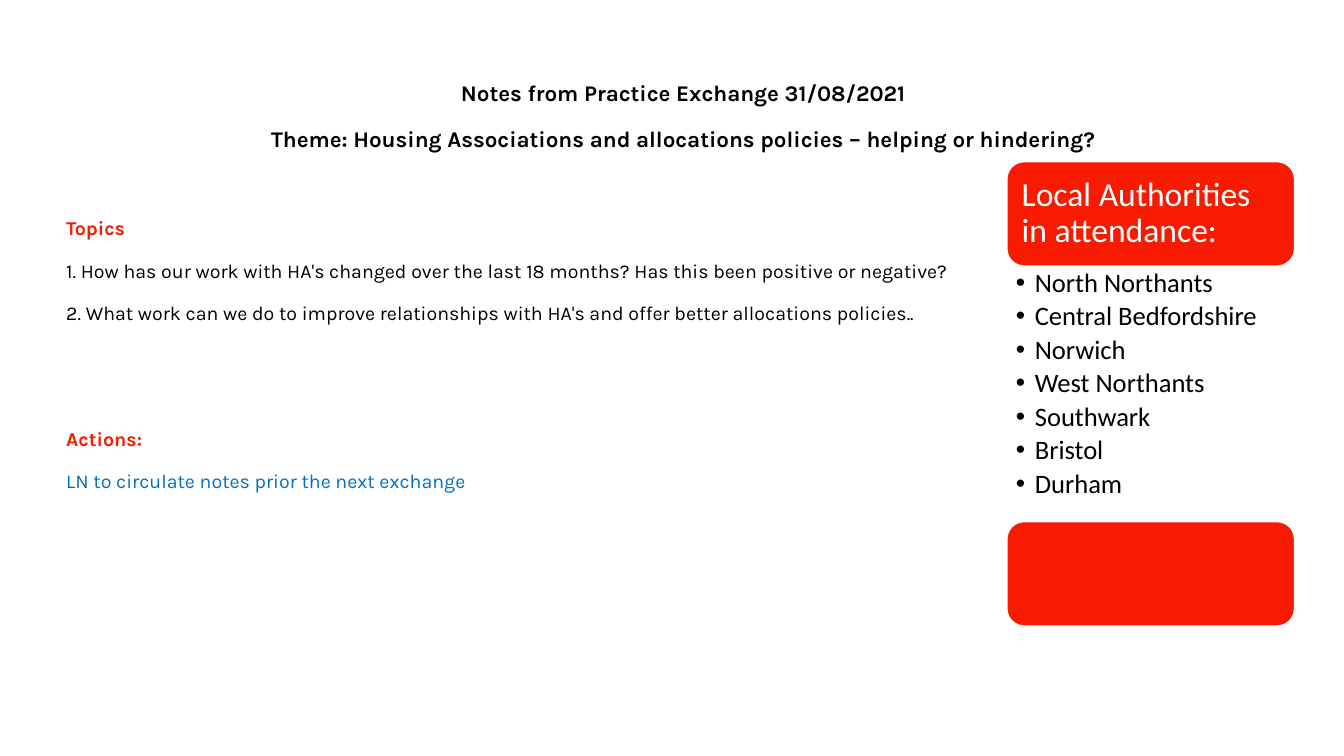
import pptx
import pptx.util
import pptx.dml.color
import pptx.enum.shapes
import pptx.enum.text
import pptx.oxml
import pptx.oxml.ns

Cm, Pt = pptx.util.Cm, pptx.util.Pt
RGBColor = pptx.dml.color.RGBColor
PP_ALIGN = pptx.enum.text.PP_ALIGN
MSO_ANCHOR = pptx.enum.text.MSO_ANCHOR

RED = RGBColor(0xF8, 0x1B, 0x02)
BLUE = RGBColor(0x00, 0x70, 0xC0)
BLACK = RGBColor(0, 0, 0)
WHITE = RGBColor(0xFF, 0xFF, 0xFF)

PANEL_LEFT, PANEL_TOP, PANEL_WIDTH = 25.37, 4.07, 7.26
BAND_HEIGHT, LIST_HEIGHT = 2.64, 6.43

# Text, size, colour, bold, alignment, space before
NOTES = [
    ("Notes from Practice Exchange 31/08/2021", 16, BLACK, True, PP_ALIGN.CENTER, 10),
    ("Theme: Housing Associations and allocations policies – helping or hindering?",
     16, BLACK, True, PP_ALIGN.CENTER, 10),
    ("Topics", 14, RED, True, PP_ALIGN.LEFT, 42.5),
    ("1. How has our work with HA's changed over the last 18 months? "
     "Has this been positive or negative?", 14, BLACK, False, PP_ALIGN.LEFT, 10),
    ("2. What work can we do to improve relationships with HA's "
     "and offer better allocations policies..", 14, BLACK, False, PP_ALIGN.LEFT, 10),
    ("Actions:", 14, RED, True, PP_ALIGN.JUSTIFY, 70),
    ("LN to circulate notes prior the next exchange",
     14, BLUE, False, PP_ALIGN.JUSTIFY, 10),
]
AUTHORITIES = ["North Northants", "Central Bedfordshire", "Norwich", "West Northants",
               "Southwark", "Bristol", "Durham"]


def format_paragraph(p, font, size, color, bold=False, spacing=0.9):
    p.line_spacing = spacing
    for r in p.runs:
        r.font.name = font
        r.font.size = Pt(size)
        r.font.bold = bold
        r.font.color.rgb = color


def set_margins(tf, left, top, right, bottom):
    tf.margin_left, tf.margin_top = Cm(left), Cm(top)
    tf.margin_right, tf.margin_bottom = Cm(right), Cm(bottom)


def add_text(s, left, top, width, height, lines):
    tf = s.shapes.add_textbox(Cm(left), Cm(top), Cm(width), Cm(height)).text_frame
    tf.word_wrap = True
    tf.text = "\n".join(lines)
    return tf


def add_band(s, top):
    sp = s.shapes.add_shape(pptx.enum.shapes.MSO_SHAPE.ROUNDED_RECTANGLE,
                            Cm(PANEL_LEFT), Cm(top), Cm(PANEL_WIDTH), Cm(BAND_HEIGHT))
    sp.shadow.inherit = False
    sp.fill.solid()
    sp.fill.fore_color.rgb = RED
    sp.line.color.rgb = WHITE
    sp.line.width = Pt(1.25)
    return sp


def add_bullet(p, indent):
    pPr = p._p.get_or_add_pPr()
    pPr.set("marL", str(Cm(indent)))
    pPr.set("indent", str(-Cm(indent)))
    ns = pptx.oxml.ns.nsdecls("a")
    pPr.append(pptx.oxml.parse_xml(f'<a:buFont {ns} typeface="Arial"/>'))
    pPr.append(pptx.oxml.parse_xml(f'<a:buChar {ns} char="•"/>'))


def add_notes(s):
    tf = add_text(s, 1.42, 1.73, 31.6, 14.6, [note[0] for note in NOTES])
    for p, (_, size, color, bold, align, before) in zip(tf.paragraphs, NOTES):
        format_paragraph(p, "Karla", size, color, bold, 1.2)
        p.alignment = align
        p.space_before = Pt(before)


def add_attendance(s):
    # Heading band
    sp = add_band(s, PANEL_TOP)
    tf = sp.text_frame
    tf.word_wrap = True
    tf.vertical_anchor = MSO_ANCHOR.MIDDLE
    tf.text = "Local Authorities in attendance:"
    set_margins(tf, 0.25, 0.25, 0.25, 0.25)
    p = tf.paragraphs[0]
    p.alignment = PP_ALIGN.LEFT
    format_paragraph(p, "Calibri", 24, WHITE)

    # Bulleted authorities
    list_top = PANEL_TOP + BAND_HEIGHT
    tf = add_text(s, PANEL_LEFT, list_top, PANEL_WIDTH, LIST_HEIGHT, AUTHORITIES)
    set_margins(tf, 0.23, 0.08, 0.48, 0.08)
    for p in tf.paragraphs:
        format_paragraph(p, "Calibri", 19, BLACK)
        p.space_after = Pt(3.4)
        add_bullet(p, 0.48)

    # Closing band
    add_band(s, list_top + LIST_HEIGHT)


def main():
    prs = pptx.Presentation()
    prs.slide_width, prs.slide_height = Cm(33.87), Cm(19.05)
    s = prs.slides.add_slide(prs.slide_layouts[6])
    add_notes(s)
    add_attendance(s)
    prs.save("out.pptx")


if __name__ == "__main__":
    main()
